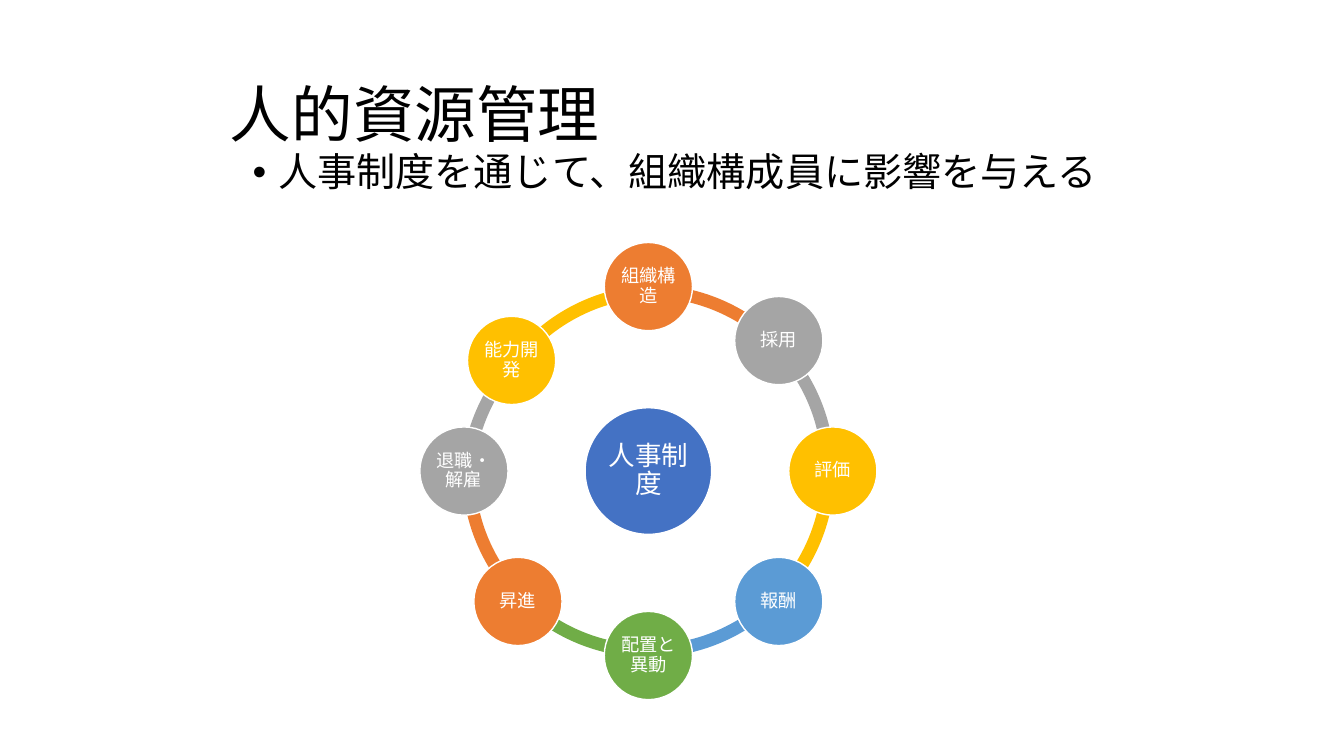
from math import cos, radians, sin

from lxml.etree import SubElement
from pptx import Presentation
from pptx.dml.color import RGBColor
from pptx.enum.shapes import MSO_SHAPE
from pptx.enum.text import MSO_ANCHOR, MSO_AUTO_SIZE, PP_ALIGN
from pptx.oxml.ns import qn
from pptx.util import Cm, Pt

COLORS = {
    "black": "000000", "white": "FFFFFF", "hub": "4472C4", "orange": "ED7D31",
    "gray": "A5A5A5", "gold": "FFC000", "blue": "5B9BD5", "green": "70AD47",
}
STEPS = [
    ("組織構造", "orange"), ("採用", "gray"), ("評価", "gold"), ("報酬", "blue"),
    ("配置と異動", "green"), ("昇進", "orange"), ("退職・解雇", "gray"),
    ("能力開発", "gold"),
]
STEP = 360 / len(STEPS)
SHIFTS = {7: (-0.16, 0.5)}
BENDS = {6: (183.97, 222.35, -0.03, 0.33), 7: (217.07, 266.76, 0.25, 0)}


def color(name):
    """Return the named colour."""
    return RGBColor.from_string(COLORS[name])


def style(para, size, font, shade, align):
    """Set the look of one paragraph."""
    para.alignment = align
    para.line_spacing = 0.9
    para.font.size = Pt(size)
    para.font.name = font
    para.font.color.rgb = color(shade)


def title(slide, left, top, width, height):
    """Place the slide title in its box."""
    head = slide.shapes.title
    head.left, head.top, head.width, head.height = map(Cm, (left, top, width, height))
    frame = head.text_frame
    frame.text = "人的資源管理"
    frame.auto_size = MSO_AUTO_SIZE.NONE
    frame.vertical_anchor = MSO_ANCHOR.MIDDLE
    style(frame.paragraphs[0], 44, "Noto Sans CJK JP", "black", PP_ALIGN.LEFT)


def body(slide, left, top, width, height):
    """Place the bulleted statement in its box."""
    frame = slide.shapes.add_textbox(*map(Cm, (left, top, width, height))).text_frame
    frame.word_wrap = True
    para = frame.paragraphs[0]
    para.text = "人事制度を通じて、組織構成員に影響を与える"
    props = para._p.get_or_add_pPr()
    props.set("marL", str(Cm(0.64)))
    props.set("indent", str(-Cm(0.64)))
    SubElement(props, qn("a:buFont")).set("typeface", "Arial")
    SubElement(props, qn("a:buChar")).set("char", "•")
    style(para, 28, "Calibri", "black", PP_ALIGN.LEFT)


def solid(group, kind, x, y, size, shade):
    """Add a plain filled shape centred on a point."""
    shape = group.shapes.add_shape(
        kind, Cm(x - size / 2), Cm(y - size / 2), Cm(size), Cm(size))
    shape.shadow.inherit = False
    shape.fill.solid()
    shape.fill.fore_color.rgb = color(shade)
    shape.line.fill.background()
    return shape


def disc(group, x, y, size, shade, text, points, inset):
    """Add a labelled circle centred on a point."""
    shape = solid(group, MSO_SHAPE.OVAL, x, y, size, shade)
    shape.line.color.rgb = color("white")
    shape.line.width = Pt(1)
    frame = shape.text_frame
    frame.word_wrap = True
    frame.vertical_anchor = MSO_ANCHOR.MIDDLE
    frame.margin_left = frame.margin_right = Cm(inset)
    frame.margin_top = frame.margin_bottom = Cm(inset)
    frame.text = text
    style(frame.paragraphs[0], points, "Calibri", "white", PP_ALIGN.CENTER)


def wheel(slide, left, top, size):
    """Draw the ring of steps around its hub in a square box."""
    group = slide.shapes.add_group_shape()
    x, y = left + size / 2, top + size / 2
    ring, node, hub = size * 0.815, size * 0.193, size * 0.277
    reach = (size - node) / 2
    for i, (_, shade) in reversed(list(enumerate(STEPS))):
        start = (270 + i * STEP) % 360
        plain = (start, (start + STEP) % 360, 0, 0)
        first, last, dx, dy = BENDS.get(i, plain)
        arc = solid(group, MSO_SHAPE.BLOCK_ARC, x + dx, y + dy, ring, shade)
        arc.adjustments[0] = first * 0.6
        arc.adjustments[1] = last * 0.6
        arc.adjustments[2] = 0.034
    disc(group, x, y, hub, "hub", "人事制度", 19, 0.08)
    for i, (text, shade) in enumerate(STEPS):
        turn = radians(270 + i * STEP)
        dx, dy = SHIFTS.get(i, (0, 0))
        disc(group, x + reach * cos(turn) + dx, y + reach * sin(turn) + dy,
             node, shade, text, 13, 0.05)


def main():
    """Build and save the slide."""
    deck = Presentation()
    deck.slide_width, deck.slide_height = Cm(33.87), Cm(19.05)
    slide = deck.slides.add_slide(deck.slide_layouts[5])
    title(slide, 5.54, 0.74, 21.9, 4.42)
    body(slide, 6.12, 3.73, 21.9, 13.9)
    wheel(slide, 10.58, 6.11, 11.52)
    deck.save("out.pptx")


if __name__ == "__main__":
    main()
